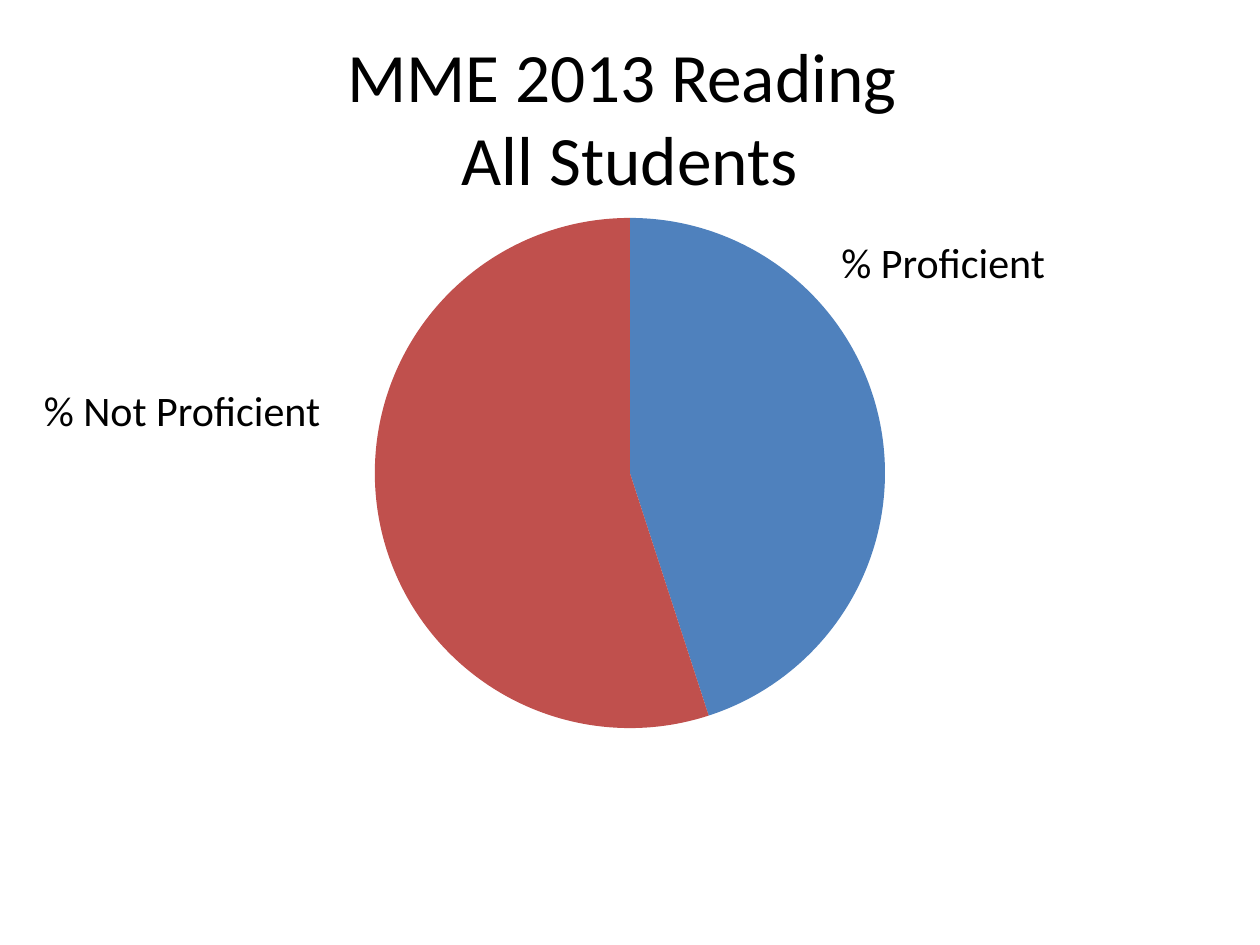
from pptx import Presentation
from pptx.chart.data import CategoryChartData
from pptx.dml.color import RGBColor
from pptx.enum.chart import XL_CHART_TYPE
from pptx.enum.text import MSO_ANCHOR, PP_ALIGN
from pptx.oxml import parse_xml
from pptx.oxml.ns import nsdecls, qn
from pptx.util import Pt

PIE = XL_CHART_TYPE.PIE
MIDDLE, TOP = MSO_ANCHOR.MIDDLE, MSO_ANCHOR.TOP
CENTER, LEFT = PP_ALIGN.CENTER, PP_ALIGN.LEFT

THEME = {
    "font": "Calibri",
    "text": RGBColor.from_string("000000"),
    "slices": ["4F81BD", "C0504D"],
    "title_size": 39.6,
    "label_size": 24,
    "chart_size": 10,
}
SLIDE_SIZE = (720, 540)
TITLE = ("MME 2013 Reading \vAll Students", (36, 21.6, 648, 90))
LABELS = [
    ("% Proficient", (473.76, 131.76, 210.24, 36)),
    ("% Not Proficient", (18, 216, 185.76, 36)),
]
SHARES = {"1": 45, "2": 55}
CHART_FRAME = (135.36, 114.48, 449.28, 311.76)
PIE_DIAMETER = 291.6


def style_font(font, size):
    font.name = THEME["font"]
    font.size = Pt(size)
    font.color.rgb = THEME["text"]


def add_text(page, text, frame, size, align=LEFT, anchor=TOP):
    box = page.shapes.add_textbox(*map(Pt, frame))
    box.text_frame.word_wrap = True
    box.text_frame.vertical_anchor = anchor
    para = box.text_frame.paragraphs[0]
    para.text = text
    para.alignment = align
    style_font(para.font, size)


def center_pie(chart):
    width, height = (PIE_DIAMETER / side for side in CHART_FRAME[2:])
    values = {"x": (1 - width) / 2, "y": (1 - height) / 2, "w": width, "h": height}
    sizes = "".join(f'<c:{key} val="{value:.4f}"/>' for key, value in values.items())
    layout = parse_xml(
        f'<c:layout {nsdecls("c")}><c:manualLayout><c:layoutTarget val="inner"/>'
        f'<c:xMode val="edge"/><c:yMode val="edge"/>{sizes}</c:manualLayout></c:layout>'
    )
    plot_area = chart.element.find(qn("c:chart")).find(qn("c:plotArea"))
    for old_layout in plot_area.findall(qn("c:layout")):
        plot_area.remove(old_layout)
    plot_area.insert(0, layout)


def add_pie(page):
    data = CategoryChartData()
    data.categories = list(SHARES)
    data.add_series("Series 1", list(SHARES.values()))
    chart = page.shapes.add_chart(PIE, *map(Pt, CHART_FRAME), data).chart
    chart.has_title = False
    chart.has_legend = False
    style_font(chart.font, THEME["chart_size"])
    plot = chart.plots[0]
    plot.vary_by_categories = True
    for index, color in enumerate(THEME["slices"]):
        fill = plot.series[0].points[index].format.fill
        fill.solid()
        fill.fore_color.rgb = RGBColor.from_string(color)
    center_pie(chart)


def main():
    deck = Presentation()
    deck.slide_width, deck.slide_height = map(Pt, SLIDE_SIZE)
    page = deck.slides.add_slide(deck.slide_layouts[6])
    add_text(page, *TITLE, THEME["title_size"], CENTER, MIDDLE)
    for text, frame in LABELS:
        add_text(page, text, frame, THEME["label_size"])
    add_pie(page)
    deck.save("out.pptx")


if __name__ == "__main__":
    main()
